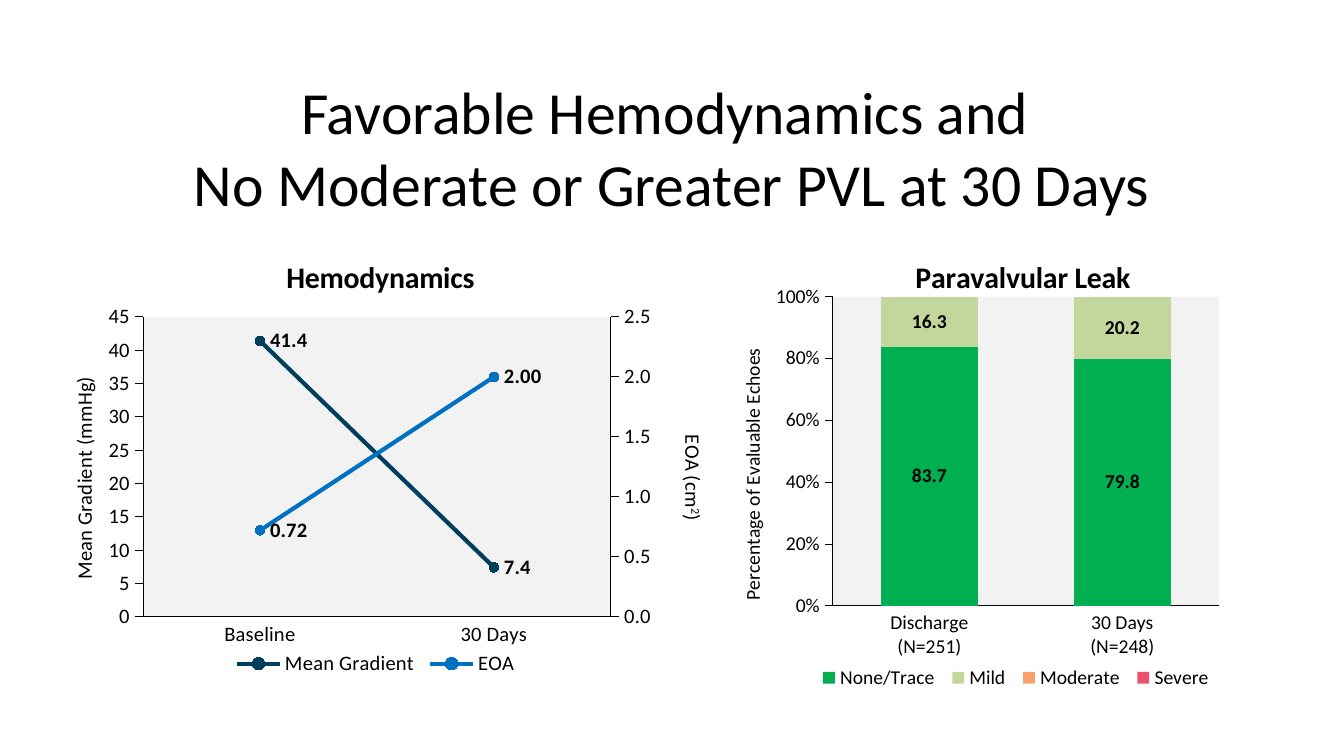
from copy import deepcopy

from lxml.etree import SubElement
from pptx import Presentation
from pptx.chart.axis import ValueAxis
from pptx.chart.data import CategoryChartData
from pptx.dml.color import RGBColor
from pptx.enum.chart import (XL_CHART_TYPE, XL_LABEL_POSITION, XL_LEGEND_POSITION,
                             XL_MARKER_STYLE, XL_TICK_MARK)
from pptx.enum.text import MSO_ANCHOR, MSO_AUTO_SIZE, PP_ALIGN
from pptx.oxml.ns import qn
from pptx.util import Emu, Pt

PX = 914400 / 134.4
FONT = "Calibri"
BLACK, PLOT_FILL = "000000", "F2F2F2"

HEADLINE = "Favorable Hemodynamics and \vNo Moderate or Greater PVL at 30 Days"
HEADLINE_BOX = (67, 83, 1210, 127)

# Boxes are left, top, width, height on the slide; titles need only left, top.
LEAK = {
    "type": XL_CHART_TYPE.COLUMN_STACKED_100,
    "title": ("Paravalvular Leak", (910, 252)),
    "box": (728, 204, 609, 497),
    "plot": (833, 297, 386, 309),
    "legend": (812, 667, 408, 26),
    "size": 10.5,
    "categories": ["Discharge\n(N=251)", "30 Days\n(N=248)"],
    "axis": {"title": "Percentage of Evaluable Echoes", "at": (736, 345),
             "max": 1, "step": 0.2, "format": "0%"},
    "series": [("None/Trace", [83.7, 79.8], "00B050", "0.0"),
               ("Mild", [16.3, 20.2], "C3D69B", "0.0"),
               ("Moderate", [0, 0], "F8A067", None),
               ("Severe", [0, 0], "EC526C", None)],
}
HEMODYNAMICS = {
    "type": XL_CHART_TYPE.LINE_MARKERS,
    "title": ("Hemodynamics", (281, 252)),
    "box": (34, 223, 683, 480),
    "plot": (143, 317, 468, 300),
    "legend": (228, 650, 296, 28),
    "size": 11,
    "categories": ["Baseline", "30 Days"],
    "axis": {"title": "Mean Gradient (mmHg)", "at": (66, 373),
             "max": 45, "step": 5, "format": "0"},
    "right_axis": {"title": "EOA (cm2)", "at": (673, 431),
                   "max": 2.5, "step": 0.5, "format": "0.0"},
    "series": [("Mean Gradient", [41.4, 7.4], "003F5C", "0.0"),
               ("EOA", [0.72, 2], "0070C0", "0.00")],
}


def px(length):
    return Emu(round(length * PX))


def rgb(color):
    return RGBColor.from_string(color)


def set_font(font, size, bold=False):
    font.name, font.size, font.bold = FONT, Pt(size), bold
    font.color.rgb = rgb(BLACK)


def place(part, box, chart_box):
    """Give a chart part a manual layout from its box on the slide."""
    for old in part.findall(qn("c:layout")):
        part.remove(old)
    layout = part.makeelement(qn("c:layout"))
    overlay = part.find(qn("c:overlay"))
    if overlay is None:
        part.insert(0, layout)
    else:
        overlay.addprevious(layout)
    manual = SubElement(layout, qn("c:manualLayout"))
    if part.tag == qn("c:plotArea"):
        SubElement(manual, qn("c:layoutTarget")).set("val", "inner")
    for mode in ("xMode", "yMode"):
        SubElement(manual, qn(f"c:{mode}")).set("val", "edge")
    left, top, width, height = chart_box
    fractions = [(box[0] - left) / width, (box[1] - top) / height]
    if len(box) == 4:
        fractions += [box[2] / width, box[3] / height]
    for key, fraction in zip("xywh", fractions):
        SubElement(manual, qn(f"c:{key}")).set("val", f"{fraction:.4f}")


def write_title(title, text, size, bold):
    frame = title.text_frame
    frame.text = text
    for run in frame.paragraphs[0].runs:
        set_font(run.font, size, bold)
    return frame


def style_axis_line(axis, size):
    axis.has_major_gridlines = False
    axis.minor_tick_mark = XL_TICK_MARK.NONE
    axis.format.line.color.rgb = rgb(BLACK)
    axis.format.line.width = Pt(0.5)
    set_font(axis.tick_labels.font, size)


def style_value_axis(axis, scale, size, chart_box, turn=-90):
    style_axis_line(axis, size)
    axis.major_tick_mark = XL_TICK_MARK.OUTSIDE
    axis.minimum_scale, axis.maximum_scale = 0, scale["max"]
    axis.major_unit = scale["step"]
    axis.tick_labels.number_format = scale["format"]
    axis.tick_labels.number_format_is_linked = False
    title = axis.axis_title
    frame = write_title(title, scale["title"], size, False)
    body = title._element.find(".//" + qn("a:bodyPr"))
    body.set("rot", str(turn * 60000))
    body.set("vert", "horz")
    place(title._element, scale["at"], chart_box)
    return frame


def add_right_axis(chart):
    """Move the last series to a second value axis and return that axis."""
    plot_area = chart._chartSpace.find(".//" + qn("c:plotArea"))
    left_lines = plot_area.find(qn("c:lineChart"))
    right_lines = deepcopy(left_lines)
    left_lines.remove(left_lines.findall(qn("c:ser"))[-1])
    right_lines.remove(right_lines.findall(qn("c:ser"))[0])
    left_lines.addnext(right_lines)
    category = deepcopy(plot_area.find(qn("c:catAx")))
    value = deepcopy(plot_area.find(qn("c:valAx")))
    plot_area.find(qn("c:valAx")).addnext(value)
    value.addnext(category)
    ids = ("50010", "50020")
    for element, number in zip(right_lines.findall(qn("c:axId")), ids):
        element.set("val", number)
    for axis, own, other in ((category, *ids), (value, *ids[::-1])):
        axis.find(qn("c:axId")).set("val", own)
        axis.find(qn("c:crossAx")).set("val", other)
    category.find(qn("c:delete")).set("val", "1")
    value.find(qn("c:axPos")).set("val", "r")
    value.find(qn("c:crosses")).set("val", "max")
    return ValueAxis(value)


def style_series(series, color, label_format, size, is_line):
    if is_line:
        series.smooth = False
        series.format.line.color.rgb = rgb(color)
        series.format.line.width = Pt(2.25)
        series.marker.style, series.marker.size = XL_MARKER_STYLE.CIRCLE, 5
        fills = [series.marker.format.fill]
        series.marker.format.line.color.rgb = rgb(color)
    else:
        fills = [series.format.fill]
    for fill in fills:
        fill.solid()
        fill.fore_color.rgb = rgb(color)
    if label_format:
        labels = series.data_labels
        labels.show_value = True
        labels.number_format, labels.number_format_is_linked = label_format, False
        labels.position = XL_LABEL_POSITION.RIGHT if is_line else XL_LABEL_POSITION.CENTER
        set_font(labels.font, size, True)


def add_chart(slide, content):
    box, size = content["box"], content["size"]
    data = CategoryChartData()
    data.categories = content["categories"]
    for name, values, *_ in content["series"]:
        data.add_series(name, values)
    chart = slide.shapes.add_chart(content["type"], *map(px, box), data).chart
    set_font(chart.font, size, True)
    title_text, title_at = content["title"]
    chart.has_title = True
    write_title(chart.chart_title, title_text, 16, True)
    place(chart.chart_title._element, title_at, box)
    chart.has_legend = True
    chart.legend.position = XL_LEGEND_POSITION.BOTTOM
    chart.legend.include_in_layout = False
    set_font(chart.legend.font, size)
    place(chart.legend._element, content["legend"], box)

    plot = chart.plots[0]
    plot.vary_by_categories = False
    is_line = content["type"] == XL_CHART_TYPE.LINE_MARKERS
    if not is_line:
        plot.gap_width, plot.overlap = 100, 100
    for series, (_, _, color, label_format) in zip(plot.series, content["series"]):
        style_series(series, color, label_format, size, is_line)
    style_axis_line(chart.category_axis, size)
    chart.category_axis.major_tick_mark = XL_TICK_MARK.NONE
    style_value_axis(chart.value_axis, content["axis"], size, box)
    if "right_axis" in content:
        frame = style_value_axis(add_right_axis(chart), content["right_axis"], size, box, 90)
        unit = frame.paragraphs[0]
        unit.runs[0].text = "EOA (cm"
        for text, baseline in (("2", "30000"), (")", "0")):
            run = unit.add_run()
            run.text = text
            set_font(run.font, size)
            run.font._element.set("baseline", baseline)

    plot_area = chart._chartSpace.find(".//" + qn("c:plotArea"))
    place(plot_area, content["plot"], box)
    background = SubElement(SubElement(plot_area, qn("c:spPr")), qn("a:solidFill"))
    SubElement(background, qn("a:srgbClr")).set("val", PLOT_FILL)


def main():
    deck = Presentation()
    deck.slide_width, deck.slide_height = px(1344), px(756)
    slide = deck.slides.add_slide(deck.slide_layouts[5])
    headline = slide.shapes.title
    headline.left, headline.top, headline.width, headline.height = map(px, HEADLINE_BOX)
    frame = headline.text_frame
    frame.text = HEADLINE
    frame.auto_size, frame.vertical_anchor = MSO_AUTO_SIZE.NONE, MSO_ANCHOR.MIDDLE
    frame.paragraphs[0].alignment = PP_ALIGN.CENTER
    for run in frame.paragraphs[0].runs:
        set_font(run.font, 32)
    for content in (LEAK, HEMODYNAMICS):
        add_chart(slide, content)
    deck.save("out.pptx")


if __name__ == "__main__":
    main()
